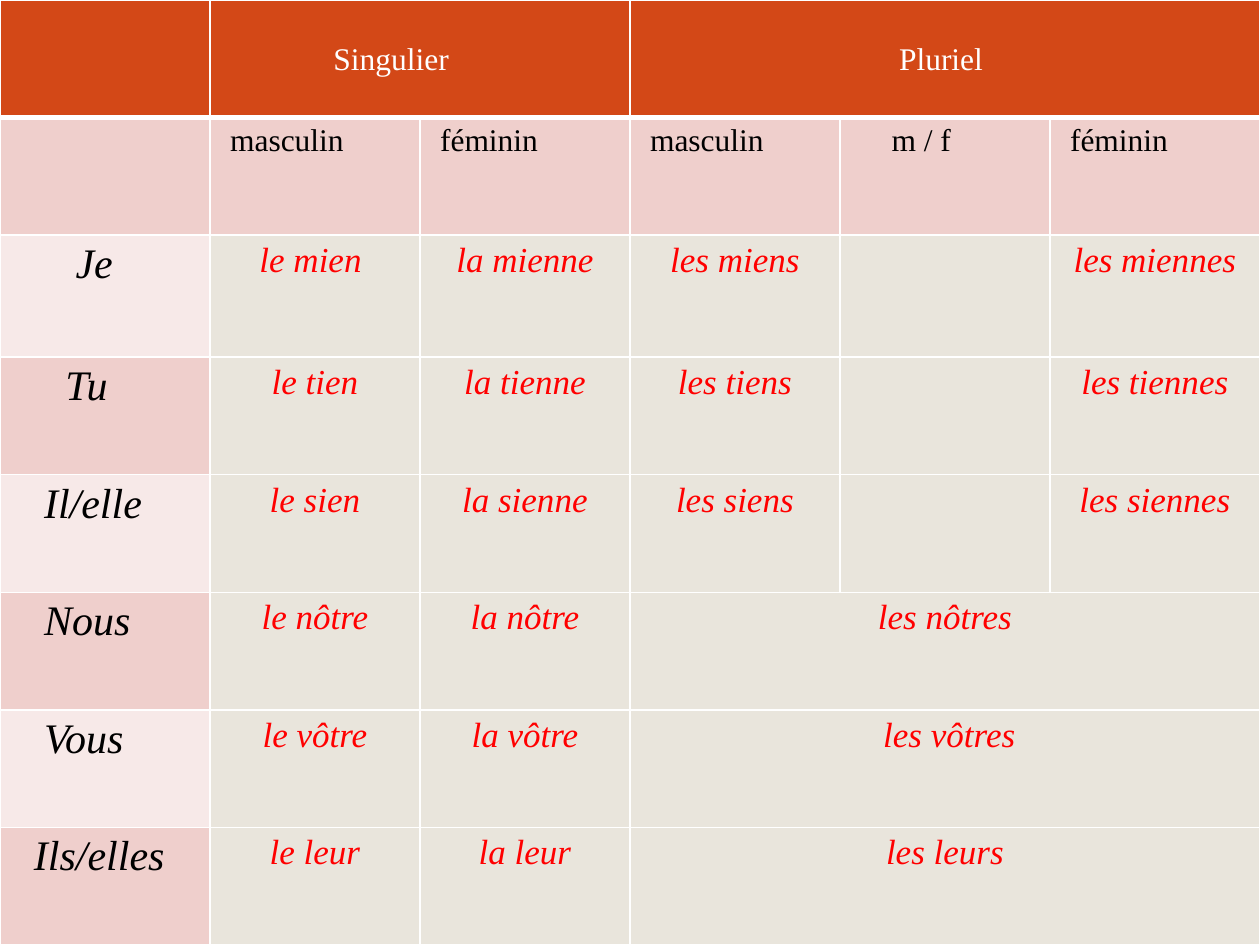
from lxml import etree
from pptx import Presentation
from pptx import util as u
from pptx.dml.color import RGBColor
from pptx.enum import text
from pptx.oxml.ns import qn

FONT = "Times New Roman"
WHITE, BLACK, RED = "FFFFFF", "000000", "FF0000"
ORANGE, PINK, PALE_PINK, BEIGE = "D34817", "EFCFCC", "F7E9E8", "E9E5DC"
COLUMNS, ROWS, JE_ROW = 6, 8, 2
LEFT, CENTER = text.PP_ALIGN.LEFT, text.PP_ALIGN.CENTER

# Column and wording of each heading, with its indent in inches
GENDERS = [(1, "masculin", 0.06), (2, "féminin", 0.06), (3, "masculin", 0.06),
           (4, "m / f", 0.31), (5, "féminin", 0.06)]

# Person, indent in inches, then the pronouns from column 1 on
PRONOUNS = [
    ("Je", 0.5, ["le mien ", "la mienne", "les miens", "", "les miennes"]),
    ("Tu", 0.42, ["le tien", "la tienne", "les tiens", "", "les tiennes"]),
    ("Il/elle", 0.25, ["le sien", "la sienne", "les siens", "", "les siennes"]),
    ("Nous", 0.25, ["le nôtre", "la nôtre", "les nôtres"]),
    ("Vous", 0.25, ["le vôtre", "la vôtre", " les vôtres"]),
    ("Ils/elles", 0.17, ["le leur", "la leur", "les leurs"]),
]


def rgb(value):
    return RGBColor.from_string(value)


def style_cell(cell, fill, bottom=1):
    """Give a cell its white borders and its fill."""
    props = cell._tc.get_or_add_tcPr()
    for side, width in (("L", 1), ("R", 1), ("T", 1), ("B", bottom)):
        line = etree.SubElement(props, qn(f"a:ln{side}"), w=str(u.Pt(width)))
        solid = etree.SubElement(line, qn("a:solidFill"))
        etree.SubElement(solid, qn("a:srgbClr"), val=WHITE)
    cell.fill.solid()
    cell.fill.fore_color.rgb = rgb(fill)


def write(cell, words, size, color, align=LEFT, italic=False, indent=0, drop=0):
    """Write one line, moved right by indent and down by drop (inches)."""
    cell.margin_left = u.Inches(0.1 + indent)
    cell.margin_top = u.Inches(0.05 + drop)
    p = cell.text_frame.paragraphs[0]
    p.text = words
    p.alignment = align
    p.font.name, p.font.size = FONT, u.Pt(size)
    p.font.bold, p.font.italic = False, italic
    p.font.color.rgb = rgb(color)


def add_headings(table):
    # Number row
    for col in range(COLUMNS):
        style_cell(table.cell(0, col), ORANGE, bottom=3)
        style_cell(table.cell(1, col), PINK)
    table.cell(0, 1).merge(table.cell(0, 2))
    table.cell(0, 3).merge(table.cell(0, 5))
    write(table.cell(0, 1), "Singulier", 18, WHITE, indent=0.88, drop=0.29)
    write(table.cell(0, 3), "Pluriel ", 18, WHITE, CENTER, drop=0.29)

    # Gender row
    for col, words, indent in GENDERS:
        write(table.cell(1, col), words, 18, BLACK, indent=indent)


def add_pronouns(table):
    for row, (person, indent, forms) in enumerate(PRONOUNS, JE_ROW):
        # Person column in alternating pinks
        style_cell(table.cell(row, 0), PINK if row % 2 else PALE_PINK)
        write(table.cell(row, 0), person, 24, BLACK, italic=True, indent=indent)

        # One plural form spans all plural columns
        for col in range(1, COLUMNS):
            style_cell(table.cell(row, col), BEIGE)
        if len(forms) == 3:
            table.cell(row, 3).merge(table.cell(row, 5))
        for col, form in enumerate(forms, 1):
            if form:
                write(table.cell(row, col), form, 20, RED, CENTER, italic=True)


def add_pronoun_table(s, left, top, width, height):
    table = s.shapes.add_table(ROWS, COLUMNS, left, top, width, height).table
    for column in table.columns:
        column.width = width // COLUMNS
    je_height = u.Inches(0.97)
    for i, row in enumerate(table.rows):
        row.height = je_height if i == JE_ROW else (height - je_height) // (ROWS - 1)
    add_headings(table)
    add_pronouns(table)


def main():
    prs = Presentation()
    prs.slide_width, prs.slide_height = u.Inches(10), u.Inches(7.5)
    s = prs.slides.add_slide(prs.slide_layouts[6])
    add_pronoun_table(s, 0, 0, prs.slide_width, prs.slide_height)
    prs.save("out.pptx")


if __name__ == "__main__":
    main()
